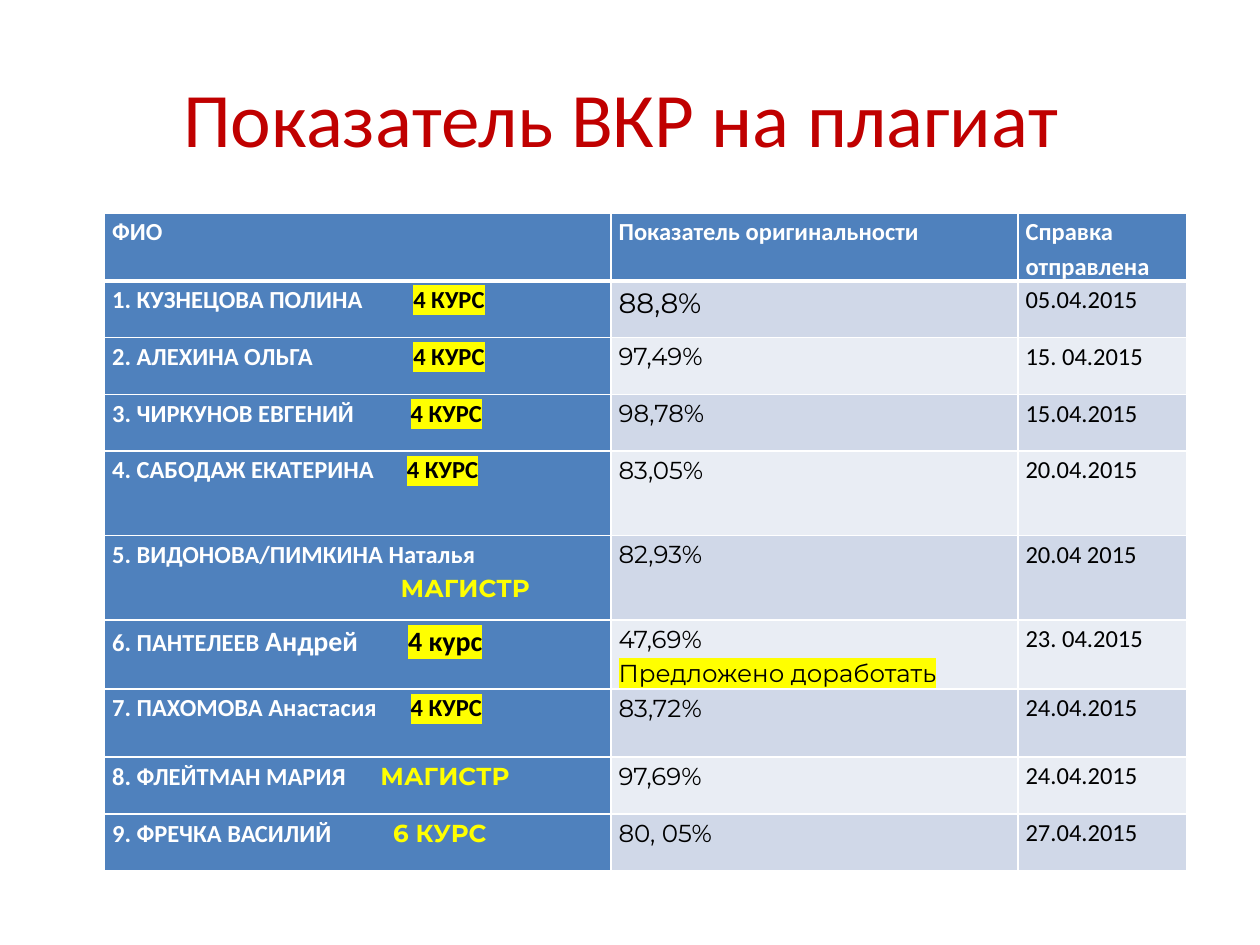
"""Build the slide with the originality table of the graduation theses."""
from lxml.etree import SubElement
from pptx import Presentation
from pptx.dml.color import RGBColor
from pptx.enum.text import MSO_ANCHOR, PP_ALIGN
from pptx.oxml.ns import qn
from pptx.util import Inches, Pt

WHITE = RGBColor(0xFF, 0xFF, 0xFF)
BLACK = RGBColor(0x00, 0x00, 0x00)
RED = RGBColor(0xC0, 0x00, 0x00)
YELLOW = RGBColor(0xFF, 0xFF, 0x00)
BLUE = RGBColor(0x4F, 0x81, 0xBD)
BANDS = [RGBColor(0xD0, 0xD8, 0xE8), RGBColor(0xE9, 0xED, 0xF4)]
COLUMNS = [4.02, 3.23, 1.34]
ROWS = [0.54, 0.45, 0.45, 0.45, 0.67, 0.67, 0.55, 0.54, 0.45, 0.45]


def add_span(para, text, color, bold=False, font="Calibri", size=14, marked=False):
    span = para.add_run()
    span.text = text
    span.font.size = Pt(size)
    span.font.bold = bold
    span.font.color.rgb = color
    if marked:
        highlight = SubElement(span.font._element, qn("a:highlight"))
        SubElement(highlight, qn("a:srgbClr"), val=str(YELLOW))
    span.font.name = font


def add_para(cell, first=True, tab=None):
    para = cell.text_frame.paragraphs[0] if first else cell.text_frame.add_paragraph()
    para.line_spacing = 1.15
    if tab:
        stops = SubElement(para._p.get_or_add_pPr(), qn("a:tabLst"))
        SubElement(stops, qn("a:tab"), pos=str(Inches(tab)), algn="l")
    return para


deck = Presentation()
deck.slide_width, deck.slide_height = Inches(10), Inches(7.5)
width, height = deck.slide_width, deck.slide_height
page = deck.slides.add_slide(deck.slide_layouts[6])

box = page.shapes.add_textbox(int(width * 0.05), int(height * 0.04), int(width * 0.9), Inches(1.25))
box.text_frame.word_wrap = True
box.text_frame.vertical_anchor = MSO_ANCHOR.MIDDLE
title = box.text_frame.paragraphs[0]
title.alignment = PP_ALIGN.CENTER
add_span(title, "Показатель ВКР на плагиат ", RED, size=44)

frame = page.shapes.add_table(len(ROWS), len(COLUMNS), Inches(0.83), Inches(1.69),
                              Inches(sum(COLUMNS)), Inches(sum(ROWS)))
table = frame.table
for column, share in zip(table.columns, COLUMNS):
    column.width = Inches(share)
for row, share in zip(table.rows, ROWS):
    row.height = Inches(share)

for row_index, row in enumerate(table.rows):
    for column_index, cell in enumerate(row.cells):
        cell.margin_left = cell.margin_right = Inches(0.06)
        cell.margin_top = cell.margin_bottom = 0
        properties = cell._tc.get_or_add_tcPr()
        for side in ("lnL", "lnR", "lnT", "lnB"):
            heavy = (row_index, side) in ((0, "lnB"), (1, "lnT"))
            line = SubElement(properties, qn(f"a:{side}"), w=str(Pt(3 if heavy else 1)))
            SubElement(SubElement(line, qn("a:solidFill")), qn("a:srgbClr"), val=str(WHITE))
        cell.fill.solid()
        is_blue = row_index == 0 or column_index == 0
        cell.fill.fore_color.rgb = BLUE if is_blue else BANDS[(row_index - 1) % 2]

for column_index, heading in enumerate(["ФИО", "Показатель оригинальности", "Справка отправлена"]):
    add_span(add_para(table.cell(0, column_index)), heading, WHITE, bold=True)

students = [
    ("1. КУЗНЕЦОВА ПОЛИНА", "4 КУРС", 2.39, "88,8%", "05.04.2015"),
    ("2. АЛЕХИНА ОЛЬГА", "4 КУРС", 2.39, "97,49%", "15. 04.2015"),
    ("3. ЧИРКУНОВ ЕВГЕНИЙ", "4 КУРС", 2.37, "98,78%", "15.04.2015"),
    ("4. САБОДАЖ ЕКАТЕРИНА", "4 КУРС", 2.34, "83,05%", "20.04.2015"),
    ("5. ВИДОНОВА/ПИМКИНА Наталья", "МАГИСТР", 2.29, "82,93%", "20.04 2015"),
    ("6. ПАНТЕЛЕЕВ Андрей", "4 курс", 2.35, "47,69%", "23. 04.2015"),
    ("7. ПАХОМОВА Анастасия", "4 КУРС", 2.37, "83,72%", "24.04.2015"),
    ("8. ФЛЕЙТМАН МАРИЯ", "МАГИСТР", 2.13, "97,69%", "24.04.2015"),
    ("9. ФРЕЧКА ВАСИЛИЙ", "6 КУРС", 2.23, "80, 05%", "27.04.2015"),
]
for number, (name, course, tab, score, date) in enumerate(students, start=1):
    name_cell, score_cell, date_cell = table.rows[number].cells
    para = add_para(name_cell, tab=tab)
    if number == 6:
        surname, given = name.rsplit(" ", 1)
        add_span(para, surname + " ", WHITE, bold=True)
        add_span(para, given, WHITE, bold=True, size=16)
    else:
        add_span(para, name, WHITE, bold=True)
    if number == 5:
        para = add_para(name_cell, first=False, tab=tab)
    add_span(para, "\t", WHITE, bold=True)
    if course.startswith("4"):
        add_span(para, course, BLACK, bold=True, size=16 if number == 6 else 14, marked=True)
    else:
        add_span(para, course, YELLOW, bold=True, font="Montserrat")
    add_span(add_para(score_cell), score, BLACK, font="Montserrat", size=16 if number == 1 else 14)
    if number == 6:
        add_span(add_para(score_cell, first=False), "Предложено доработать", BLACK,
                 font="Montserrat", marked=True)
    add_span(add_para(date_cell), date, BLACK)

deck.save("out.pptx")
